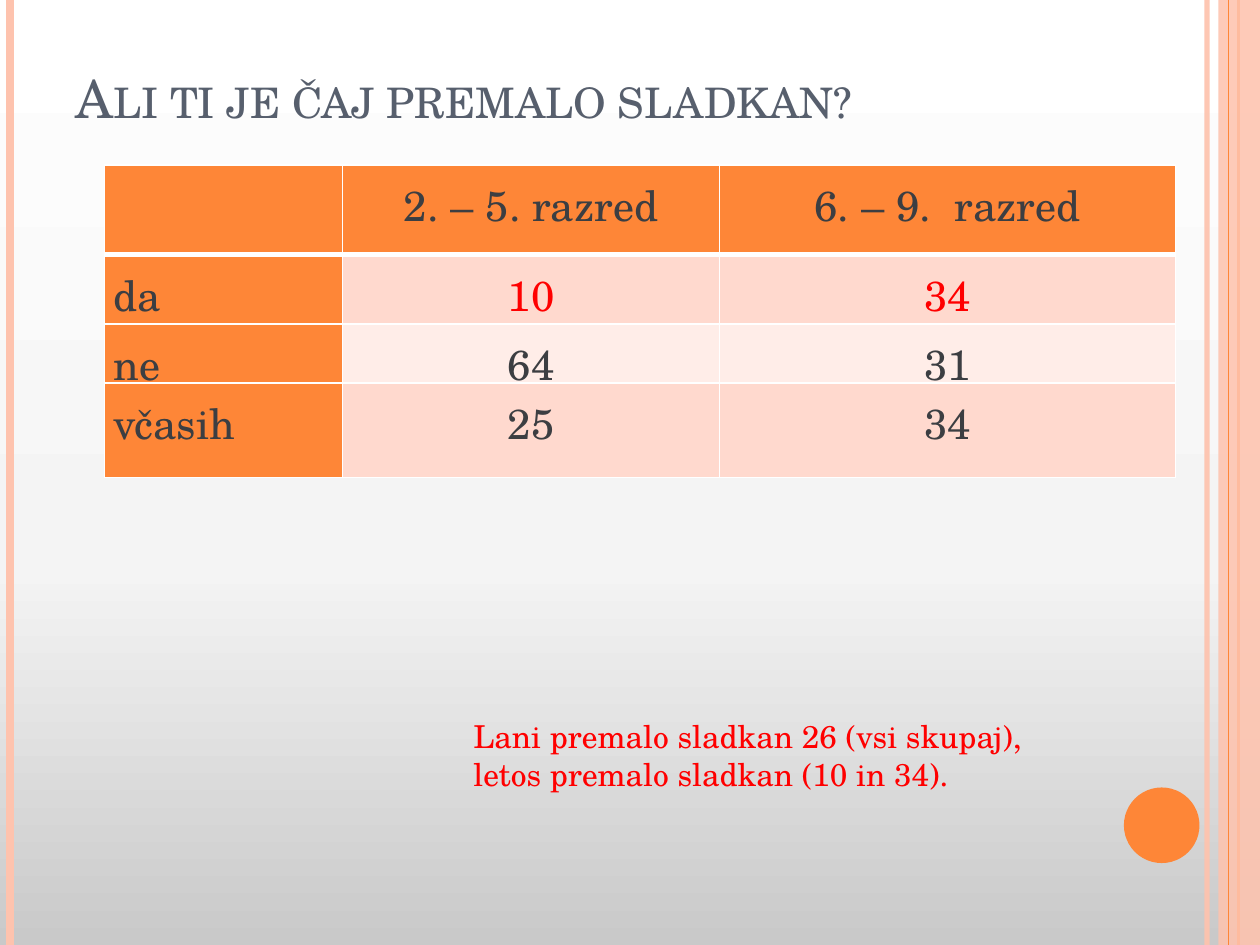
from lxml import etree
from pptx import Presentation
from pptx.dml.color import RGBColor
from pptx.enum.shapes import MSO_CONNECTOR, MSO_SHAPE
from pptx.enum.text import MSO_ANCHOR, PP_ALIGN
from pptx.oxml import parse_xml
from pptx.oxml.ns import nsdecls, qn
from pptx.util import Inches, Pt

STRAIGHT = MSO_CONNECTOR.STRAIGHT
RECTANGLE, OVAL = MSO_SHAPE.RECTANGLE, MSO_SHAPE.OVAL
BOTTOM = MSO_ANCHOR.BOTTOM
LEFT, CENTER = PP_ALIGN.LEFT, PP_ALIGN.CENTER

FONT = "TeX Gyre Schola"
COLORS = {
    "orange": "FE8637", "peach": "FEC3AE", "band": "FFD9CE", "light band": "FFEDE8",
    "title": "575F6D", "text": "3C3E42", "red": "FF0000", "white": "FFFFFF",
}
BACKGROUND_STOPS = [(0, "C9C9C9"), (40, "F4F4F4"), (100, "FFFFFF")]


def rgb(name):
    return RGBColor.from_string(COLORS[name])


def write(text_frame, text, size, color, align=LEFT):
    paragraph = text_frame.paragraphs[0]
    paragraph.alignment = align
    run = paragraph.add_run()
    run.text = text
    for font in (paragraph.font, run.font):
        font.name, font.size = FONT, Pt(size)
        font.color.rgb = rgb(color)
    return paragraph


presentation = Presentation()
presentation.slide_width, presentation.slide_height = Inches(10), Inches(7.5)
slide = presentation.slides.add_slide(presentation.slide_layouts[6])

# Background, dark at the bottom
stops = "".join(
    f'<a:gs pos="{position * 1000}"><a:srgbClr val="{color}"/></a:gs>'
    for position, color in BACKGROUND_STOPS
)
slide.background.fill.gradient()
gradient = slide.background._cSld.find(".//" + qn("a:gradFill"))
gradient.getparent().replace(gradient, parse_xml(
    f'<a:gradFill {nsdecls("a")} rotWithShape="1"><a:gsLst>{stops}</a:gsLst>'
    '<a:lin ang="16200000" scaled="0"/></a:gradFill>'
))

# Vertical stripes; the translucent band lies under the last line
stripes = [(9.58, "peach", 3, 93), (0.08, "peach", 4.5, 100),
           (9.83, "orange", 1.5, 100), (9.75, "orange", 0.75, 100)]
for x, color, width, opacity in stripes:
    if x == 9.75:
        band = slide.shapes.add_shape(RECTANGLE, Inches(9.67), 0, Inches(0.33), Inches(7.5))
        band.shadow.inherit = False
        band.fill.solid()
        band.fill.fore_color.rgb = rgb("peach")
        band.line.fill.background()
        band_color = band._element.spPr.find(".//" + qn("a:srgbClr"))
        etree.SubElement(band_color, qn("a:alpha"), val="87000")
    stripe = slide.shapes.add_connector(STRAIGHT, Inches(x), 0, Inches(x), Inches(7.5))
    stripe.line.color.rgb = rgb(color)
    stripe.line.width = Pt(width)
    properties = stripe._element.spPr
    if opacity < 100:
        stripe_color = properties.find(".//" + qn("a:srgbClr"))
        etree.SubElement(stripe_color, qn("a:alpha"), val=str(opacity * 1000))
    etree.SubElement(properties, qn("a:effectLst"))

# Corner disc
disc = slide.shapes.add_shape(OVAL, Inches(8.92), Inches(6.25), Inches(0.6), Inches(0.6))
disc.shadow.inherit = False
disc.fill.solid()
disc.fill.fore_color.rgb = rgb("orange")
disc.line.fill.background()

# Title in small capitals
title = slide.shapes.add_textbox(Inches(0.5), Inches(0.3), Inches(8.17), Inches(0.77))
title.text_frame.word_wrap = True
title.text_frame.vertical_anchor = BOTTOM
heading = write(title.text_frame, "Ali ti je čaj premalo sladkan?", 30, "title")
heading.runs[0]._r.get_or_add_rPr().set("cap", "small")

# Answers by class group
answers = [
    ["", "2. – 5. razred", "6. – 9.  razred"],
    ["da", "10", "34"],
    ["ne", "64", "31"],
    ["včasih", "25", "34"],
]
column_widths = [1.89, 2.99, 3.62]
row_heights = [0.71, 0.55, 0.47, 0.75]
table = slide.shapes.add_table(
    len(answers), len(column_widths), Inches(0.83), Inches(1.31), Inches(8.5), Inches(2.48)
).table
for column, width in zip(table.columns, column_widths):
    column.width = Inches(width)
for row, height in zip(table.rows, row_heights):
    row.height = Inches(height)

for row_index, values in enumerate(answers):
    for column_index, value in enumerate(values):
        cell = table.cell(row_index, column_index)
        cell.margin_left = cell.margin_right = Inches(0.07)
        cell.margin_top = cell.margin_bottom = 0
        is_header = row_index == 0 or column_index == 0
        if value:
            color = "red" if row_index == 1 and column_index > 0 else "text"
            align = CENTER if column_index else LEFT
            write(cell.text_frame, value, 24, color, align).line_spacing = 1.15

        # Borders come before the fill in the cell properties
        cell_properties = cell._tc.get_or_add_tcPr()
        for side in ("L", "R", "T", "B"):
            under_header = (row_index, side) in ((0, "B"), (1, "T"))
            border = etree.SubElement(
                cell_properties, qn(f"a:ln{side}"), w=str(Pt(3 if under_header else 1)))
            border_fill = etree.SubElement(border, qn("a:solidFill"))
            etree.SubElement(border_fill, qn("a:srgbClr"), val=COLORS["white"])
        cell.fill.solid()
        body_fill = "band" if row_index % 2 else "light band"
        cell.fill.fore_color.rgb = rgb("orange" if is_header else body_fill)

# Comparison with last year
note = slide.shapes.add_textbox(Inches(3.66), Inches(5.64), Inches(5), Inches(0.71))
note.text_frame.word_wrap = True
write(note.text_frame,
      "Lani premalo sladkan 26 (vsi skupaj), letos premalo sladkan (10 in 34).", 18, "red")

presentation.save("out.pptx")
